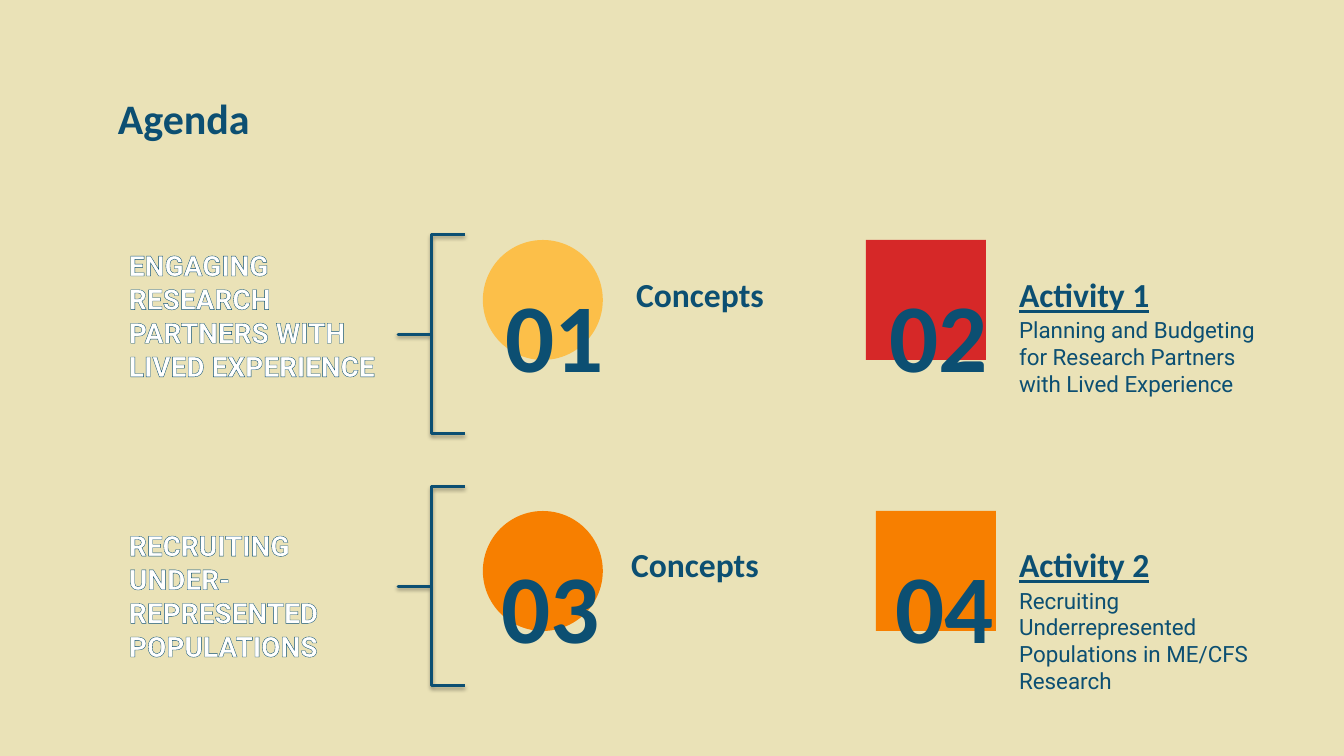
from lxml import etree
from pptx import Presentation
from pptx.dml.color import RGBColor
from pptx.enum.shapes import MSO_SHAPE as Shape
from pptx.enum.text import MSO_ANCHOR as Anchor, MSO_AUTO_SIZE as AutoSize, PP_ALIGN as Align
from pptx.oxml import parse_xml
from pptx.oxml.ns import nsdecls, qn
from pptx.util import Pt

COLORS = {"sand": "EAE2B7", "navy": "0C4F72", "yellow": "FCBF49", "red": "D62828",
          "orange": "F77F00", "white": "FFFFFF", "black": "000000"}
TITLE = "Agenda"
SECTIONS = [
    {"topic": "ENGAGING RESEARCH PARTNERS WITH LIVED EXPERIENCE",
     "topic_top": 167.8, "brace_top": 167.8, "badge_top": 171.4, "text_top": 187.9,
     "items": [
         {"number": "01", "heading": "Concepts", "shape": Shape.OVAL, "color": "yellow",
          "badge_left": 344.9, "number_left": 347.8, "text_left": 445},
         {"number": "02", "heading": "Activity 1", "shape": Shape.RECTANGLE, "color": "red",
          "badge_left": 618.5, "number_left": 622.1, "text_left": 718.6,
          "detail": "Planning and Budgeting for Research Partners with Lived Experience"}]},
    {"topic": "RECRUITING UNDER-REPRESENTED POPULATIONS",
     "topic_top": 367.9, "brace_top": 347.8, "badge_top": 365, "text_top": 380.9,
     "items": [
         {"number": "03", "heading": "Concepts", "shape": Shape.OVAL, "color": "orange",
          "badge_left": 344.9, "number_left": 344.9, "text_left": 441.4},
         {"number": "04", "heading": "Activity 2", "shape": Shape.RECTANGLE, "color": "orange",
          "badge_left": 625.7, "number_left": 626.4, "text_left": 718.6,
          "detail": "Recruiting Underrepresented Populations in ME/CFS Research"}]},
]
INSET = 9.36
BADGE = 85.7
DETAIL_DROP = 28.8


def rgb(name):
    return RGBColor.from_string(COLORS[name])


def write(shape, text, size, font="Calibri", color="navy", bold=True, underline=None,
          align=Align.LEFT, anchor=Anchor.TOP, outline=None):
    frame = shape.text_frame
    frame.word_wrap = True
    frame.auto_size = AutoSize.NONE
    frame.vertical_anchor = anchor
    frame.margin_left = frame.margin_right = Pt(INSET)
    frame.margin_top = frame.margin_bottom = Pt(INSET)
    paragraph = frame.paragraphs[0]
    paragraph.alignment = align
    run = paragraph.add_run()
    run.text = text
    run.font.name = font
    run.font.size = Pt(size)
    run.font.bold = bold
    run.font.underline = underline
    run.font.color.rgb = rgb(color)
    if outline:
        run.font._element.insert(0, parse_xml(
            f'<a:ln {nsdecls("a")} w="{Pt(0.52)}"><a:solidFill>'
            f'<a:srgbClr val="{COLORS[outline]}"/></a:solidFill></a:ln>'))


def add_text(slide, left, top, width, height, text, size, **style):
    box = slide.shapes.add_textbox(Pt(left), Pt(top), Pt(width), Pt(height))
    write(box, text, size, **style)


def add_badge(slide, item, top):
    badge = slide.shapes.add_shape(item["shape"], Pt(item["badge_left"]), Pt(top),
                                   Pt(BADGE), Pt(BADGE))
    badge.shadow.inherit = False
    badge.fill.solid()
    badge.fill.fore_color.rgb = rgb(item["color"])
    badge.line.fill.background()


def add_brace(slide, top):
    brace = slide.shapes.add_shape(Shape.LEFT_BRACE, Pt(284.4), Pt(top), Pt(47.5), Pt(141.8))
    brace.adjustments[0] = 0
    brace.adjustments[1] = 0.5
    brace.fill.background()
    brace.line.color.rgb = rgb("navy")
    brace.line.width = Pt(2)
    brace.shadow.inherit = False
    effects = brace._element.spPr.find(qn("a:effectLst"))
    shadow = etree.SubElement(effects, qn("a:outerShdw"), blurRad=str(Pt(3.1)),
                              dist=str(Pt(1.6)), dir="5400000", rotWithShape="0")
    shade = etree.SubElement(shadow, qn("a:srgbClr"), val=COLORS["black"])
    etree.SubElement(shade, qn("a:alpha"), val="38000")


def add_item(slide, item, section):
    top, left = section["text_top"], item["text_left"]
    add_badge(slide, item, section["badge_top"])
    add_text(slide, item["number_left"], top, 97.2, 101.5, item["number"], 69.3,
             align=Align.CENTER, anchor=Anchor.MIDDLE)
    add_text(slide, left, top, 177.1, 46.1, item["heading"], 24,
             anchor=Anchor.BOTTOM, underline="detail" in item)
    if "detail" in item:
        add_text(slide, left, top + DETAIL_DROP, 191.5, 72.7, item["detail"], 16,
                 font="Roboto", bold=False)


def main():
    presentation = Presentation()
    presentation.slide_width = Pt(960)
    presentation.slide_height = Pt(540)
    slide = presentation.slides.add_slide(presentation.slide_layouts[5])
    slide.background.fill.solid()
    slide.background.fill.fore_color.rgb = rgb("sand")
    title = slide.shapes.title
    title.left, title.top, title.width, title.height = Pt(74.9), Pt(56.9), Pt(810), Pt(60.5)
    write(title, TITLE, 30)
    for section in SECTIONS:
        add_text(slide, 82.8, section["topic_top"], 202, 100, section["topic"], 20,
                 font="Roboto", color="white", outline="navy")
        add_brace(slide, section["brace_top"])
        for item in section["items"]:
            add_item(slide, item, section)
    presentation.save("out.pptx")


if __name__ == "__main__":
    main()
